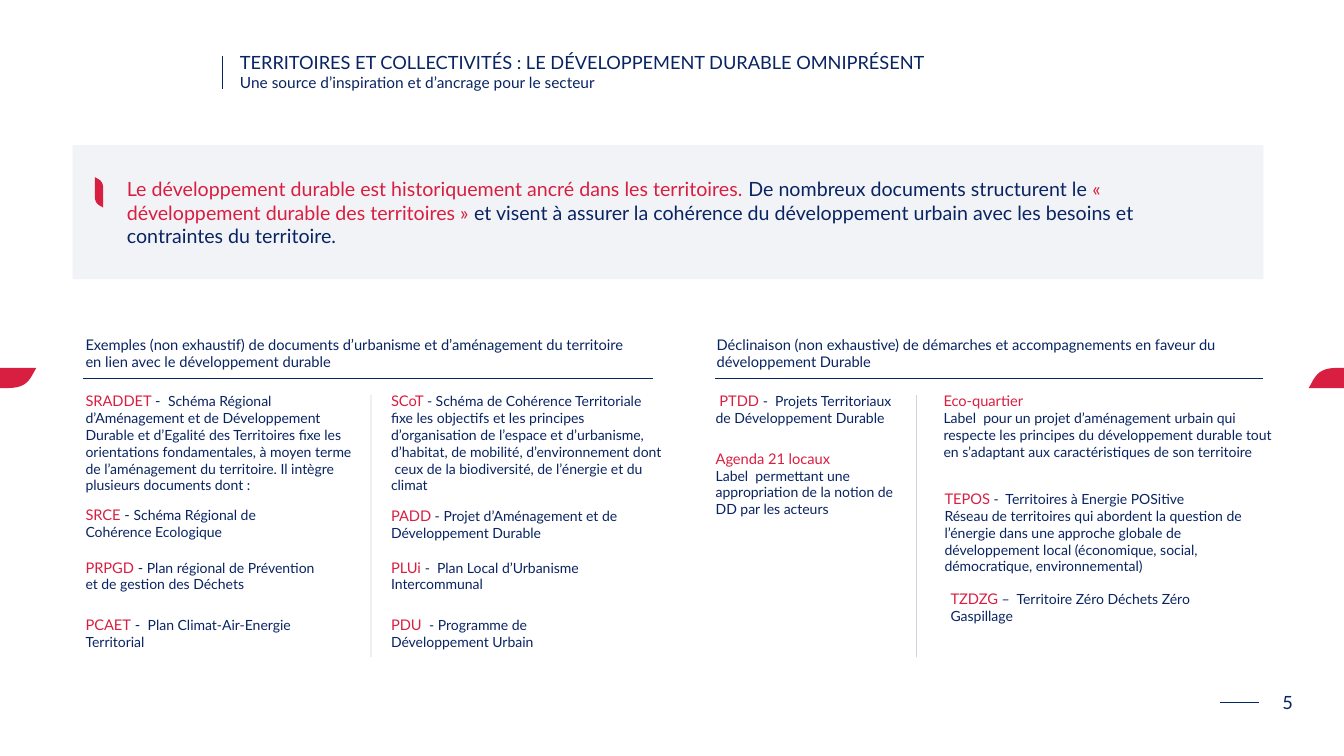
"""Build the slide on sustainable development in territories and local authorities."""
from dataclasses import dataclass

from lxml.etree import SubElement
from pptx import Presentation
from pptx.dml.color import RGBColor
from pptx.enum.shapes import MSO_CONNECTOR as CONN, MSO_SHAPE as SHAPE
from pptx.enum.text import MSO_ANCHOR as ANCHOR, MSO_AUTO_SIZE as AUTO, PP_ALIGN as ALIGN
from pptx.oxml.ns import qn
from pptx.util import Inches, Pt


@dataclass(frozen=True)
class Theme:
    font: str = "Lato"
    navy: RGBColor = RGBColor(0x09, 0x24, 0x62)
    red: RGBColor = RGBColor(0xD9, 0x1F, 0x41)
    title: float = 13
    subtitle: float = 11
    lead: float = 14
    term: float = 10.5
    body: float = 10


T = Theme()
STYLES = {
    "number": (T.title, T.navy),
    "lead": (T.lead, T.navy),
    "accent": (T.lead, T.red),
    "heading": (T.term, T.navy),
    "term": (T.term, T.red),
    "body": (T.body, T.navy),
}


def add_text(slide, x, y, w, h, *paragraphs):
    tf = slide.shapes.add_textbox(Inches(x), Inches(y), Inches(w), Inches(h)).text_frame
    tf.word_wrap = True
    for i, runs in enumerate(paragraphs):
        p = tf.add_paragraph() if i else tf.paragraphs[0]
        for style, text in runs:
            r = p.add_run()
            r.text = text
            r.font.name = T.font
            size, r.font.color.rgb = STYLES[style]
            r.font.size = Pt(size)
    return tf


def add_leaf(slide, x, y, scale=1, upright=False):
    length, height, steps = 0.72, 0.2, 12
    edge = [(0.44, 0.2), (0.64, 0.2), (0.66, 0.1), (0.72, 0)]
    half = []
    for i in range(steps + 1):
        t = i / steps
        weights = ((1 - t) ** 3, 3 * t * (1 - t) ** 2, 3 * t * t * (1 - t), t ** 3)
        half.append([sum(k * pt[axis] for k, pt in zip(weights, edge)) for axis in (0, 1)])
    outline = half + [(length - u, height - v) for u, v in half]
    points = []
    for u, v in outline:
        dx, dy = (v, -u) if upright else (u, v)
        points.append((Inches(x + dx * scale), Inches(y + dy * scale)))
    builder = slide.shapes.build_freeform(*points[0])
    builder.add_line_segments(points[1:], close=True)
    sp = builder.convert_to_shape()
    sp.shadow.inherit = False
    sp.fill.solid()
    sp.fill.fore_color.rgb = T.red
    sp.line.fill.background()


prs = Presentation()
prs.slide_width, prs.slide_height = Inches(13.33), Inches(7.5)
slide = prs.slides.add_slide(prs.slide_layouts[5])

title = slide.shapes.title
title.left, title.top = Inches(2.18), Inches(0.52)
title.width, title.height = Inches(10.32), Inches(0.38)
tf = title.text_frame
tf.text = ("TERRITOIRES ET COLLECTIVITÉS : LE DÉVELOPPEMENT DURABLE OMNIPRÉSENT\v"
           "Une source d’inspiration et d’ancrage pour le secteur")
tf.auto_size = AUTO.NONE
tf.vertical_anchor = ANCHOR.MIDDLE
tf.margin_left = Inches(0.2)
tf.paragraphs[0].alignment = ALIGN.LEFT
for r, size in zip(tf.paragraphs[0].runs, (T.title, T.subtitle)):
    r.font.name, r.font.size = T.font, Pt(size)
    r.font.color.rgb = T.navy

panel = slide.shapes.add_shape(SHAPE.RECTANGLE, Inches(0.72), Inches(1.44), Inches(11.81), Inches(1.33))
panel.shadow.inherit = False
panel.fill.solid()
panel.fill.fore_color.rgb = T.navy
panel.line.fill.background()
faint = [(panel, 5)]

add_leaf(slide, -0.36, 3.65)
add_leaf(slide, 12.98, 3.65)
add_leaf(slide, 0.94, 2.06, scale=0.42, upright=True)

RULES = [
    (2.2, 0.56, 2.2, 0.88, 0.35, 100),
    (12.1, 6.97, 12.49, 6.97, 0.35, 100),
    (0.82, 3.75, 6.48, 3.75, 0.5, 100),
    (7.09, 3.75, 12.53, 3.75, 0.5, 100),
    (3.68, 3.92, 3.68, 6.52, 0.5, 20),
    (9.09, 3.92, 9.09, 6.52, 0.5, 20),
]
for x1, y1, x2, y2, weight, opacity in RULES:
    rule = slide.shapes.add_connector(CONN.STRAIGHT, Inches(x1), Inches(y1), Inches(x2), Inches(y2))
    rule.line.color.rgb = T.navy
    rule.line.width = Pt(weight)
    SubElement(rule._element.spPr, qn("a:effectLst"))
    if opacity < 100:
        faint.append((rule, opacity))

for sp, opacity in faint:
    for color in sp._element.spPr.iter(qn("a:srgbClr")):
        SubElement(color, qn("a:alpha"), val=str(opacity * 1000))

add_text(slide, 1.16, 1.71, 10.78, 0.81, [
    ("accent", "Le développement durable est historiquement ancré dans les territoires. "),
    ("lead", "De nombreux documents structurent le "),
    ("accent", "« développement durable des territoires » "),
    ("lead", "et visent à assurer la cohérence du développement urbain avec les besoins "
             "et contraintes du territoire."),
])
add_text(slide, 0.75, 3.28, 5.73, 0.47, [
    ("heading", "Exemples (non exhaustif) de documents d’urbanisme et d’aménagement du territoire "
                "en lien avec le développement durable")])
add_text(slide, 7.01, 3.28, 5.49, 0.47, [
    ("heading", "Déclinaison (non exhaustive) de démarches et accompagnements en faveur du "
                "développement Durable")])

ENTRIES = [
    (0.75, 3.84, 2.92, 1.12, "SRADDET ", "-  ",
     "Schéma Régional d’Aménagement et de Développement Durable et d’Egalité des Territoires "
     "fixe les orientations fondamentales, à moyen terme de l’aménagement du territoire. "
     "Il intègre plusieurs documents dont :"),
    (0.75, 4.97, 2.31, 0.45, "SRCE", " - ", "Schéma Régional de Cohérence Ecologique"),
    (0.75, 5.45, 2.59, 0.52, "PRPGD", " - ", "Plan régional de Prévention et de gestion des Déchets"),
    (0.75, 6.06, 2.31, 0.46, "PCAET", " -  ", "Plan Climat-Air-Energie Territorial"),
    (3.78, 3.84, 2.88, 1.12, "SCoT ", "",
     "- Schéma de Cohérence Territoriale fixe les objectifs et les principes d’organisation "
     "de l’espace et d’urbanisme, d’habitat, de mobilité, d’environnement dont  ceux de la "
     "biodiversité, de l’énergie et du climat"),
    (3.78, 4.98, 2.52, 0.46, "PADD", "", " - Projet d’Aménagement et de Développement Durable"),
    (3.78, 5.45, 2.31, 0.52, "PLUi ", "", "-  Plan Local d’Urbanisme Intercommunal"),
    (3.78, 6.06, 2.31, 0.46, "PDU  ", "", "- Programme de Développement Urbain"),
    (7, 3.84, 2.1, 0.45, " PTDD ", "", "-  Projets Territoriaux de Développement Durable"),
    (9.33, 5.76, 2.86, 0.52, "TZDZG", "", " –  Territoire Zéro Déchets Zéro Gaspillage"),
]
for x, y, w, h, term, dash, body in ENTRIES:
    runs = [("term", term), ("heading", dash), ("body", body)]
    tf = add_text(slide, x, y, w, h, [run for run in runs if run[1]])
    if h == 0.52:
        tf.vertical_anchor = ANCHOR.MIDDLE

add_text(slide, 7, 4.41, 2.03, 0.78, [("term", "Agenda 21 locaux")], [
    ("body", "Label  permettant une appropriation de la notion de DD par les acteurs")])
add_text(slide, 9.26, 3.84, 3.48, 0.95, [("term", "Eco-quartier")], [
    ("body", "Label  pour un projet d’aménagement urbain qui respecte les principes du développement "
             "durable tout en s’adaptant aux caractéristiques de son territoire")])
add_text(slide, 9.27, 4.81, 3.36, 0.95,
         [("term", "TEPOS"), ("body", " -  Territoires à Energie POSitive")], [
    ("body", "Réseau de territoires qui abordent la question de l’énergie dans une approche globale de "
             "développement local (économique, social, démocratique, environnemental)")])

tf = add_text(slide, 12.52, 6.81, 0.5, 0.32, [("number", "5")])
tf.word_wrap = False
tf.vertical_anchor = ANCHOR.MIDDLE
tf.paragraphs[0].alignment = ALIGN.CENTER

prs.save("out.pptx")
